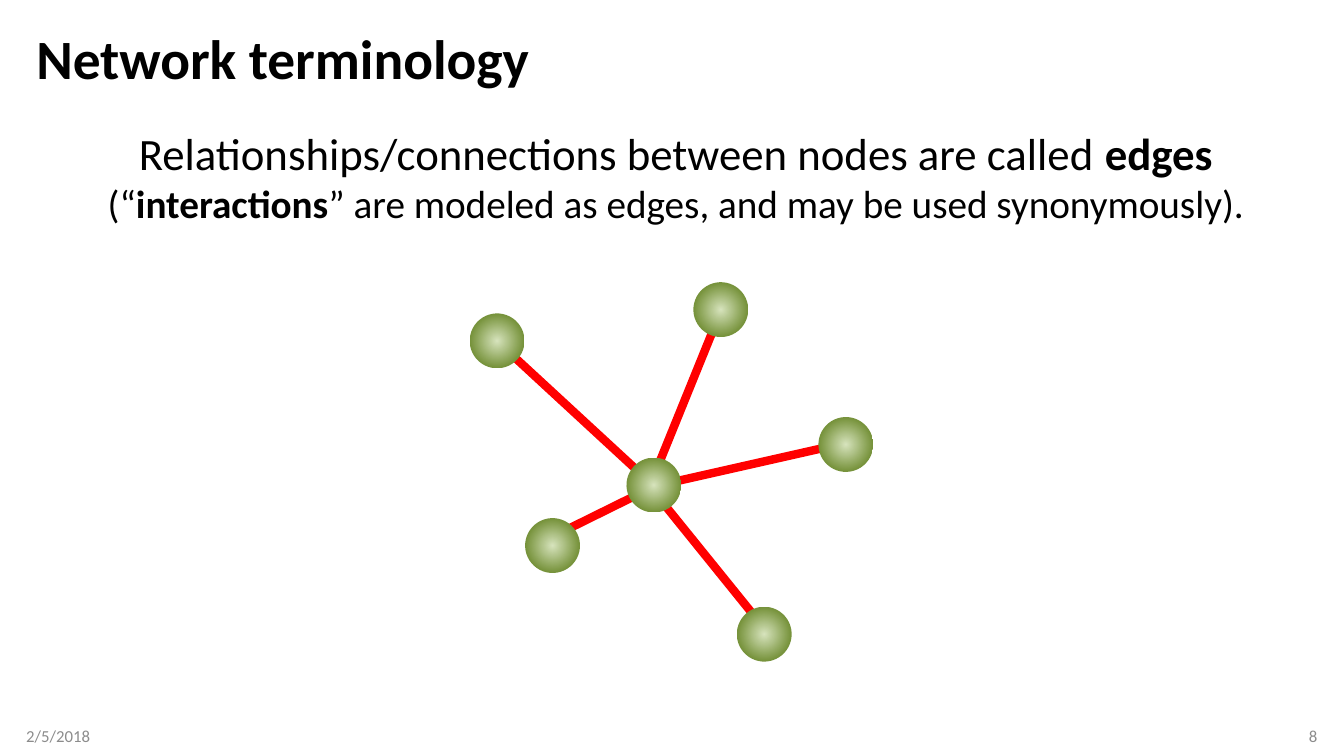
from dataclasses import dataclass
from typing import Any

import lxml.etree
import pptx
import pptx.dml.color
import pptx.enum.shapes
import pptx.enum.text
import pptx.oxml.ns
import pptx.util

Pt = pptx.util.Pt
ALIGN = pptx.enum.text.PP_ALIGN
ANCHOR = pptx.enum.text.MSO_ANCHOR

COLORS = {
    "text": "000000",
    "footer": "8C8C8C",
    "edge": "FF0000",
    "node center": "D7E4BD",
    "node rim": "77933C",
}
FONT = "Calibri"
NODE_DIAMETER = 39.2
NODE_ROTATION = 327.4
EDGE_WIDTH = 6


@dataclass
class Node:
    center_x: float
    center_y: float


@dataclass
class Edge:
    begin_x: float
    begin_y: float
    end_x: float
    end_y: float


@dataclass
class Run:
    text: str
    size: float
    bold: bool = False
    color: str = "text"


@dataclass
class TextBlock:
    left: float
    top: float
    width: float
    height: float
    lines: list[list[Run]]
    paragraph_format: dict[str, Any]
    frame_format: dict[str, Any]


EDGES = [
    Edge(389.5, 385.9, 466.6, 347.8),
    Edge(462.2, 352.1, 517.7, 215.3),
    Edge(348.5, 237.6, 470.2, 349.9),
    Edge(463.7, 347, 545.8, 448.6),
    Edge(468.7, 347, 605.5, 316.1),
]
HUB = Node(467.1, 346.5)
NODES = [
    Node(355.1, 243.5),
    Node(394.7, 389.7),
    Node(545.9, 453),
    Node(514.9, 221.2),
    Node(604.2, 317.5),
    HUB,
]

TITLE = TextBlock(
    18.7, 18, 922.3, 51.8,
    [[Run("Network terminology", 39.6, True)]],
    {"alignment": ALIGN.LEFT, "line_spacing": 0.9},
    {"vertical_anchor": ANCHOR.MIDDLE},
)
TEXT_BOXES = [
    TextBlock(
        18.7, 511.2, 216, 28.8,
        [[Run("2/5/2018", 12, color="footer")]],
        {"alignment": ALIGN.LEFT},
        {"vertical_anchor": ANCHOR.MIDDLE, "margin_left": 0},
    ),
    TextBlock(
        725, 511.2, 216, 28.8,
        [[Run("8", 12, color="footer")]],
        {"alignment": ALIGN.RIGHT},
        {"vertical_anchor": ANCHOR.MIDDLE, "margin_right": 0},
    ),
    TextBlock(
        48.2, 86.4, 869, 79.9,
        [
            [
                Run("Relationships/connections between nodes are called ", 32),
                Run("edges", 32, True),
            ],
            [
                Run("(“", 28),
                Run("interactions", 28, True),
                Run("” are modeled as edges, and may be used synonymously).", 28),
            ],
        ],
        {"alignment": ALIGN.CENTER},
        {"vertical_anchor": ANCHOR.TOP},
    ),
]


def rgb(name: str) -> pptx.dml.color.RGBColor:
    return pptx.dml.color.RGBColor.from_string(COLORS[name])


def apply_format(target: Any, values: dict[str, Any]) -> None:
    for attribute, value in values.items():
        setattr(target, attribute, value)


def write_block(shape: Any, block: TextBlock) -> None:
    """Place a text shape and fill it with the block's formatted lines."""
    apply_format(shape, {
        "left": Pt(block.left), "top": Pt(block.top),
        "width": Pt(block.width), "height": Pt(block.height),
    })
    frame = shape.text_frame
    apply_format(frame, {
        "word_wrap": True,
        "auto_size": pptx.enum.text.MSO_AUTO_SIZE.NONE,
        **block.frame_format,
    })
    for index, line in enumerate(block.lines):
        paragraph = frame.add_paragraph() if index else frame.paragraphs[0]
        apply_format(paragraph, block.paragraph_format)
        for item in line:
            run = paragraph.add_run()
            run.text = item.text
            apply_format(run.font, {
                "name": FONT, "size": Pt(item.size), "bold": item.bold,
            })
            run.font.color.rgb = rgb(item.color)


def draw_edge(network: Any, edge: Edge) -> None:
    connector = network.shapes.add_connector(
        pptx.enum.shapes.MSO_CONNECTOR.STRAIGHT,
        Pt(edge.begin_x), Pt(edge.begin_y), Pt(edge.end_x), Pt(edge.end_y),
    )
    connector.line.color.rgb = rgb("edge")
    connector.line.width = Pt(EDGE_WIDTH)
    properties = connector._element.spPr
    lxml.etree.SubElement(properties, pptx.oxml.ns.qn("a:effectLst"))


def make_gradient_radial(shape: Any) -> None:
    """Replace the linear gradient direction by a circle from the center."""
    qn = pptx.oxml.ns.qn
    gradient = shape._element.spPr.find(qn("a:gradFill"))
    linear = gradient.find(qn("a:lin"))
    circle = lxml.etree.Element(qn("a:path"), {"path": "circle"})
    center = {side: "50000" for side in "ltrb"}
    lxml.etree.SubElement(circle, qn("a:fillToRect"), center)
    gradient.replace(linear, circle)


def draw_node(network: Any, node: Node) -> None:
    shape = network.shapes.add_shape(
        pptx.enum.shapes.MSO_SHAPE.OVAL,
        Pt(node.center_x - NODE_DIAMETER / 2),
        Pt(node.center_y - NODE_DIAMETER / 2),
        Pt(NODE_DIAMETER), Pt(NODE_DIAMETER),
    )
    shape.rotation = NODE_ROTATION
    shape.shadow.inherit = False
    shape.line.fill.background()
    shape.fill.gradient()
    stops = [(0, "node center"), (0.5, "node rim")]
    for stop, (position, color) in zip(shape.fill.gradient_stops, stops):
        stop.position = position
        stop.color.rgb = rgb(color)
    make_gradient_radial(shape)


def main() -> None:
    presentation = pptx.Presentation()
    presentation.slide_width = Pt(960)
    presentation.slide_height = Pt(540)
    slide = presentation.slides.add_slide(presentation.slide_layouts[5])
    write_block(slide.shapes.title, TITLE)
    network = slide.shapes.add_group_shape()
    for edge in EDGES:
        draw_edge(network, edge)
    for node in NODES:
        draw_node(network, node)
    for block in TEXT_BOXES:
        write_block(slide.shapes.add_textbox(0, 0, 0, 0), block)
    presentation.save("out.pptx")


if __name__ == "__main__":
    main()
